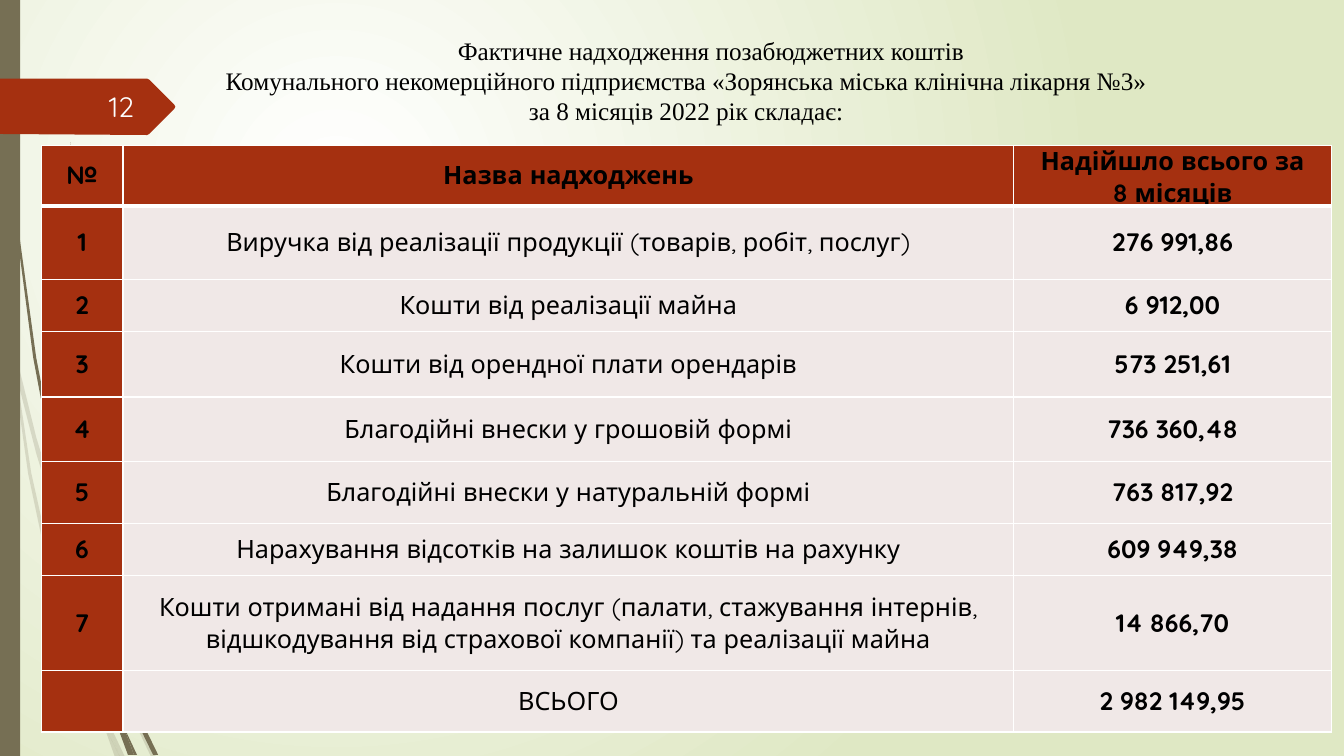
from lxml.etree import SubElement
from pptx import Presentation
from pptx.dml.color import RGBColor
from pptx.enum.shapes import MSO_SHAPE
from pptx.enum.text import MSO_ANCHOR, PP_ALIGN
from pptx.oxml import parse_xml
from pptx.oxml.ns import nsdecls, qn
from pptx.util import Cm, Pt

OLIVE, RUST, PALE, WHITE, BLACK = "766F54", "A53010", "F0E8E7", "FFFFFF", "000000"


def paint(fill, color):
    fill.solid()
    fill.fore_color.rgb = RGBColor.from_string(color)


def add_text(paragraph, text, color, size=18, font="Quicksand", bold=False):
    run = paragraph.add_run()
    run.text = text
    run.font.name, run.font.size, run.font.bold = font, Pt(size), bold
    run.font.color.rgb = RGBColor.from_string(color)


presentation = Presentation()
presentation.slide_width, presentation.slide_height = Cm(33.87), Cm(19.05)
slide = presentation.slides.add_slide(presentation.slide_layouts[6])
shapes = slide.shapes

# Background: radial glow in the upper left
slide.element.cSld.insert(0, parse_xml(
    f'<p:bg {nsdecls("p", "a")}><p:bgPr><a:gradFill rotWithShape="1"><a:gsLst>'
    f'<a:gs pos="0"><a:srgbClr val="{WHITE}"/></a:gs>'
    '<a:gs pos="100000"><a:srgbClr val="DFE8C4"/></a:gs></a:gsLst>'
    '<a:path path="circle"><a:fillToRect l="50000" t="50000" r="100000" b="100000"/></a:path>'
    '</a:gradFill><a:effectLst/></p:bgPr></p:bg>'))

# Outlines of the grass blades and the number tag, in hundredths of an inch
light_blades = [
    [(58, 522), (84, 599), (85, 586), (62, 520), (36, 434), (14, 345), (17, 376), (36, 450)],
    [(92, 607), (88, 596), (88, 610), (123, 694), (150, 751), (155, 751), (127, 692)],
    [(119, 751), (124, 751), (105, 711)],
    [(93, 683), (70, 619), (48, 545), (31, 469), (17, 376), (11, 350), (28, 470),
     (44, 546), (65, 621), (92, 693), (101, 714), (99, 707)],
    [(101, 714), (114, 751), (119, 751)],
    [(96, 692), (93, 683), (99, 707), (101, 714), (119, 751), (105, 711)],
]
dark_blades = [
    [(7, 110), (17, 233), (33, 355), (56, 477), (57, 481), (55, 457), (55, 453),
     (36, 355), (19, 232), (8, 109), (5, 48), (4, 0), (3, 0), (4, 48)],
    [(113, 649), (110, 641), (111, 656), (132, 708), (152, 749), (157, 749), (136, 706)],
    [(60, 472), (58, 453), (54, 349), (58, 245), (63, 193), (70, 141), (62, 193),
     (56, 245), (52, 349), (55, 449)],
    [(133, 749), (136, 749), (122, 719)],
    [(117, 722), (127, 749), (131, 749)],
    [(116, 706), (110, 691), (116, 717), (117, 722), (130, 749), (133, 749), (122, 719)],
]
number_tag = [(0, 78), (146, 78), (148, 79), (173, 104), (174, 106), (173, 108),
              (148, 133), (146, 134), (0, 133)]

side_bar = shapes.add_shape(MSO_SHAPE.RECTANGLE, 0, 0, Cm(0.51), Cm(19.05))
decorations = [(side_bar, OLIVE, 100)]
for outlines, color, opacity in [(light_blades, OLIVE, 20), (dark_blades, OLIVE, 100),
                                 ([number_tag], RUST, 100)]:
    for outline in outlines:
        builder = shapes.build_freeform(*outline[0], scale=Cm(2.54) / 100)
        builder.add_line_segments(outline[1:], close=True)
        decorations.append((builder.convert_to_shape(), color, opacity))
for shape, color, opacity in decorations:
    paint(shape.fill, color)
    shape.line.fill.background()
    shape.shadow.inherit = False
    if opacity < 100:
        tint = shape.element.spPr.find(qn("a:solidFill"))[0]
        SubElement(tint, qn("a:alpha")).set("val", str(opacity * 1000))

# Title
title_frame = shapes.add_textbox(Cm(1.04), Cm(0.76), Cm(32.51), Cm(1.48)).text_frame
title_frame.word_wrap = True
paragraph = title_frame.paragraphs[0]
paragraph.alignment = PP_ALIGN.CENTER
paragraph._p.get_or_add_pPr().set("indent", str(Cm(1.25)))
title_lines = [
    "Фактичне надходження позабюджетних коштів",
    "Комунального некомерційного підприємства «Зорянська міська клінічна лікарня №3»",
    "за 8 місяців 2022 рік складає:",
]
for index, line in enumerate(title_lines):
    if index:
        paragraph.add_line_break()
    add_text(paragraph, line, BLACK, font="Times New Roman")

# Slide number
number_frame = shapes.add_textbox(Cm(1.47), Cm(2.18), Cm(2.16), Cm(1.02)).text_frame
number_frame.word_wrap = True
number_frame.vertical_anchor = MSO_ANCHOR.MIDDLE
number_frame.paragraphs[0].alignment = PP_ALIGN.RIGHT
add_text(number_frame.paragraphs[0], "12", "FEFFFF", size=20)

# Income table
column_widths = [2.06, 22.45, 8]
income_rows = [
    (1.37, "№", "Назва надходжень", "Надійшло всього за\n8 місяців"),
    (1.85, "1", "Виручка від реалізації продукції (товарів, робіт, послуг)", "276 991,86"),
    (1.32, "2", "Кошти від реалізації майна", "6 912,00"),
    (1.65, "3", "Кошти від орендної плати орендарів", "573 251,61"),
    (1.63, "4", "Благодійні внески у грошовій формі", "736 360,48"),
    (1.55, "5", "Благодійні внески у натуральній формі", "763 817,92"),
    (1.32, "6", "Нарахування відсотків на залишок коштів на рахунку", "609 949,38"),
    (2.39, "7", "Кошти отримані від надання послуг (палати, стажування інтернів, "
                "відшкодування від страхової компанії) та реалізації майна", "14 866,70"),
    (1.55, "", "ВСЬОГО", "2 982 149,95"),
]
table = shapes.add_table(len(income_rows), len(column_widths), Cm(1.04), Cm(3.66),
                         Cm(sum(column_widths)), Cm(sum(row[0] for row in income_rows))).table
for column, width in zip(table.columns, column_widths):
    column.width = Cm(width)
for row_index, (height, *texts) in enumerate(income_rows):
    table.rows[row_index].height = Cm(height)
    for column_index, text in enumerate(texts):
        cell = table.cell(row_index, column_index)
        cell.vertical_anchor = MSO_ANCHOR.MIDDLE
        cell.margin_left = cell.margin_right = Cm(0.18)
        cell.margin_top = cell.margin_bottom = 0

        # White rules, heavier between the header and the body
        properties = cell._tc.get_or_add_tcPr()
        for side in "LRTB":
            heavy = (row_index, side) in [(0, "B"), (1, "T")]
            border = SubElement(properties, qn(f"a:ln{side}"), w=str(Pt(3 if heavy else 1)))
            SubElement(SubElement(border, qn("a:solidFill")), qn("a:srgbClr"), val=WHITE)
        paint(cell.fill, RUST if row_index == 0 or column_index == 0 else PALE)

        for line_index, line in enumerate(text.split("\n")):
            frame = cell.text_frame
            paragraph = frame.add_paragraph() if line_index else frame.paragraphs[0]
            paragraph.alignment = PP_ALIGN.CENTER
            if line:
                add_text(paragraph, line, BLACK, bold=row_index == 0 or column_index != 1)

presentation.save("out.pptx")
